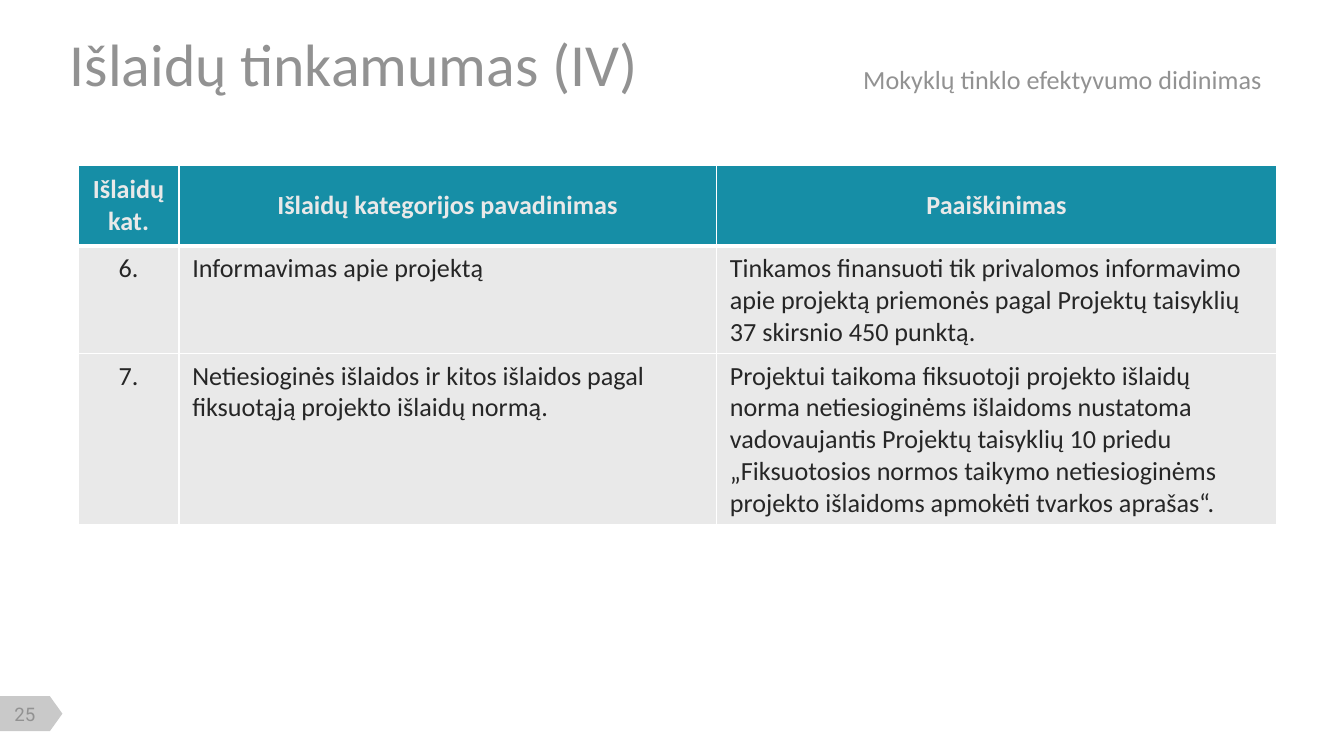
from lxml.etree import SubElement
from pptx import Presentation
from pptx.dml.color import RGBColor
from pptx.enum.shapes import MSO_SHAPE
from pptx.enum.text import MSO_ANCHOR, PP_ALIGN
from pptx.oxml.ns import qn
from pptx.util import Cm, Pt

# Content
TITLE = "Išlaidų tinkamumas (IV)"
TOPIC = "Mokyklų tinklo efektyvumo didinimas"
PAGE_NUMBER = "25"
EXPENSES = [
    ("Išlaidų kat.", "Išlaidų kategorijos pavadinimas", "Paaiškinimas"),
    ("6.", "Informavimas apie projektą",
     "Tinkamos finansuoti tik privalomos informavimo apie projektą priemonės "
     "pagal Projektų taisyklių 37 skirsnio 450 punktą."),
    ("7.", "Netiesioginės išlaidos ir kitos išlaidos pagal fiksuotąją projekto išlaidų normą.",
     "Projektui taikoma fiksuotoji projekto išlaidų norma netiesioginėms išlaidoms "
     "nustatoma vadovaujantis Projektų taisyklių 10 priedu „Fiksuotosios normos taikymo "
     "netiesioginėms projekto išlaidoms apmokėti tvarkos aprašas“."),
]
COLUMN_WIDTHS = (1.9, 10.16, 10.59)
ROW_HEIGHTS = (1.52, 2.02, 3.23)
COLORS = {"grey": "929292", "tab": "C9C9C9", "header": "168EA6",
          "light": "E9E9E9", "text": "262626", "border": "FFFFFF"}


def rgb(name):
    return RGBColor.from_string(COLORS[name])


def write(frame, text, size, color, align=PP_ALIGN.LEFT, font="Calibri", bold=False):
    frame.text = text
    paragraph = frame.paragraphs[0]
    paragraph.alignment = align
    run_font = paragraph.runs[0].font
    run_font.name, run_font.size, run_font.bold = font, Pt(size), bold
    run_font.color.rgb = rgb(color)


def add_label(box, text, size, **style):
    frame = slide.shapes.add_textbox(*map(Cm, box)).text_frame
    frame.word_wrap = True
    write(frame, text, size, "grey", **style)
    return frame


def add_borders(cell, bottom_width):
    for side, width in (("L", 1), ("R", 1), ("T", 1), ("B", bottom_width)):
        line = SubElement(cell._tc.get_or_add_tcPr(), qn(f"a:ln{side}"), w=str(Pt(width)))
        fill = SubElement(line, qn("a:solidFill"))
        SubElement(fill, qn("a:srgbClr"), val=COLORS["border"])


presentation = Presentation()
presentation.slide_width, presentation.slide_height = Cm(25.4), Cm(14.29)
slide = presentation.slides.add_slide(presentation.slide_layouts[6])

# Page number on its tab
page_tab = slide.shapes.add_shape(MSO_SHAPE.FLOWCHART_OFFPAGE_CONNECTOR,
                                  Cm(0.26), Cm(12.9), Cm(0.66), Cm(1.18))
page_tab.rotation = 270
page_tab.shadow.inherit = False
page_tab.fill.solid()
page_tab.fill.fore_color.rgb = rgb("tab")
page_tab.line.fill.background()
page_frame = add_label((0.05, 13.28, 0.84, 0.43), PAGE_NUMBER, 10,
                       align=PP_ALIGN.CENTER, font="Roboto")
page_frame.vertical_anchor = MSO_ANCHOR.MIDDLE
page_frame.margin_left = page_frame.margin_right = 0
page_frame.margin_top = page_frame.margin_bottom = 0

# Expense table
expense_table = slide.shapes.add_table(
    len(EXPENSES), len(COLUMN_WIDTHS), Cm(1.48), Cm(3.13),
    Cm(sum(COLUMN_WIDTHS)), Cm(sum(ROW_HEIGHTS))).table
expense_table.horz_banding = False
for column, width in zip(expense_table.columns, COLUMN_WIDTHS):
    column.width = Cm(width)
for row, height in zip(expense_table.rows, ROW_HEIGHTS):
    row.height = Cm(height)
for r, expense in enumerate(EXPENSES):
    header = r == 0
    for c, text in enumerate(expense):
        cell = expense_table.cell(r, c)
        centered = header or c == 0
        write(cell.text_frame, text, 14, "light" if header else "text",
              PP_ALIGN.CENTER if centered else PP_ALIGN.LEFT, bold=header)
        cell.vertical_anchor = MSO_ANCHOR.MIDDLE if header else MSO_ANCHOR.TOP
        add_borders(cell, 3 if header else 1)
        cell.fill.solid()
        cell.fill.fore_color.rgb = rgb("header" if header else "light")

# Title and topic
add_label((1.07, 0.38, 11.43, 1.55), TITLE, 32)
add_label((13.74, 1.07, 10.36, 1.07), TOPIC, 14, align=PP_ALIGN.RIGHT)

presentation.save("out.pptx")
